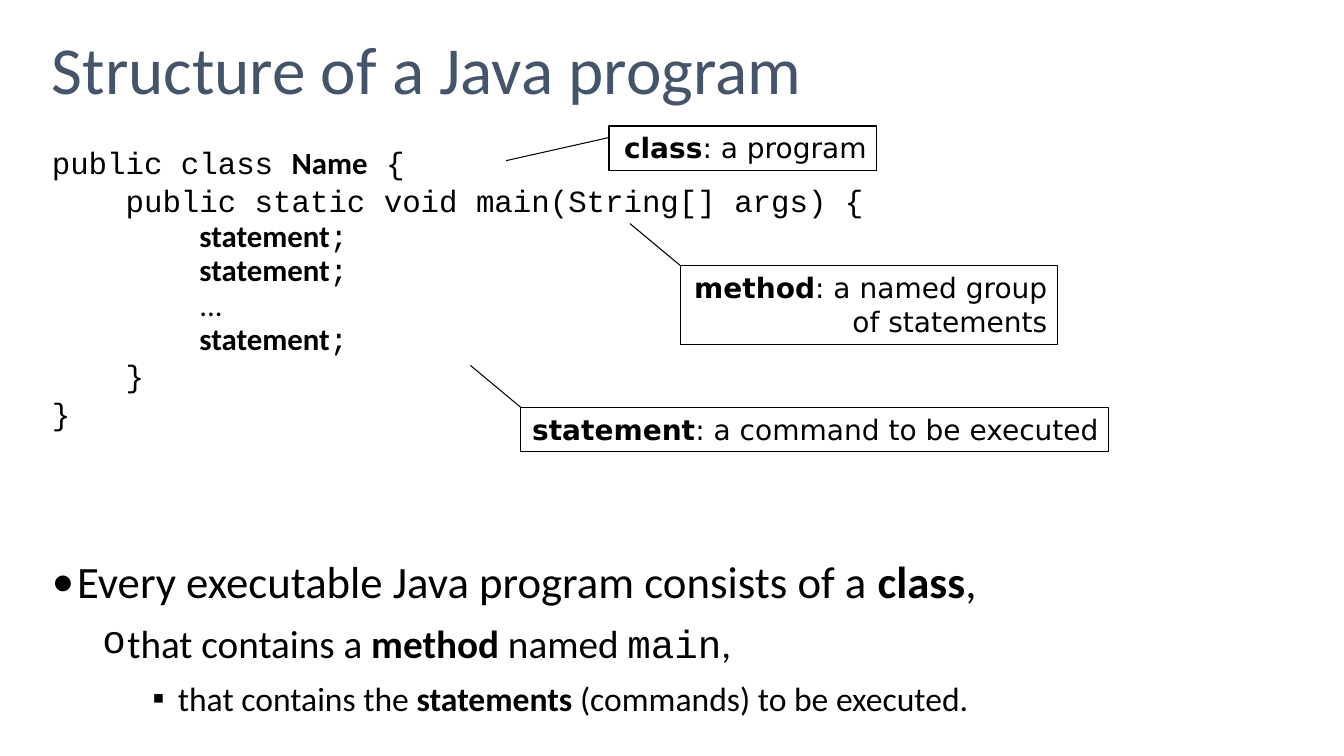
import pptx
import pptx.util
import pptx.dml.color
import pptx.enum.shapes
import pptx.enum.text
import pptx.oxml.ns
import lxml.etree
from dataclasses import dataclass

PX = 9525  # EMU in one px, 96 px to the inch


@dataclass(frozen=True)
class Theme:
    title: str = "44546A"
    ink: str = "000000"
    paper: str = "FFFFFF"
    body: str = "Calibri"
    mono: str = "Courier New"
    label: str = "DejaVu Sans"
    head: int = 48
    code: int = 22
    note: int = 20
    levels: tuple = (32, 28, 24)
    rule: float = 0.75


THEME = Theme()

# Each run is its text and a style: "" plain, "b" bold, "m" monospaced
STATE = [("        ", "m"), ("statement", "b"), (";", "m")]
CODE = [
    (0.8, [("public class ", "m"), ("Name", "b"), (" {", "m")]),
    (0.8, [("    public static void main(String[] args) {", "m")]),
    (0.7, STATE),
    (0.7, STATE),
    (0.7, [("        ", "m"), ("...", "")]),
    (0.7, STATE),
    (0.8, [("    }", "m")]),
    (0.8, [("}", "m")]),
]
POINTS = [
    ("•", THEME.body, [("Every executable Java program consists of a ", ""),
                       ("class", "b"), (",", "")]),
    ("o", THEME.mono, [("that contains a ", ""), ("method", "b"),
                       (" named ", ""), ("main", "m"), (",", "")]),
    ("▪", THEME.body, [("that contains the ", ""), ("statements", "b"),
                       (" (commands) to be executed.", "")]),
]
# Box, start of the leader down its left edge, tip from the box corner,
# hanging indent, term, lines of meaning
NOTES = [
    ((580, 120, 255, 42), 11, (-98, 33), 30, "class", [": a program"]),
    ((496, 388, 560, 42), 0, (-48, -40), 30, "statement",
     [": a command to be executed"]),
    ((648, 253, 359, 75), 0, (-48, -40), 138, "method",
     [": a named group", "of statements"]),
]


def color(code):
    return pptx.dml.color.RGBColor.from_string(code)


def scale(box):
    return [n * PX for n in box]


def frame(slide, box):
    text = slide.shapes.add_textbox(*scale(box)).text_frame
    text.word_wrap = True
    return text


def para(text, first):
    return text.paragraphs[0] if first else text.add_paragraph()


def indent(par, left, hang):
    props = par._p.get_or_add_pPr()
    props.set("marL", str(left * PX))
    props.set("indent", str(-hang * PX))
    return props


def bullet(props, mark, face):
    font = lxml.etree.SubElement(props, pptx.oxml.ns.qn("a:buFont"))
    font.set("typeface", face)
    char = lxml.etree.SubElement(props, pptx.oxml.ns.qn("a:buChar"))
    char.set("char", mark)


def style(par, size, face, ink=THEME.ink):
    par.font.size = pptx.util.Pt(size)
    par.font.name = face
    par.font.color.rgb = color(ink)


def fill(par, runs, base):
    """Add the runs, naming a font only where it differs from the base."""
    for words, kind in runs:
        run = par.add_run()
        run.text = words
        face = THEME.mono if kind == "m" else THEME.body
        if face != base:
            run.font.name = face
        if kind == "b":
            run.font.bold = True


def title(slide, box, words):
    text = frame(slide, box)
    text.vertical_anchor = pptx.enum.text.MSO_ANCHOR.MIDDLE
    par = text.paragraphs[0]
    par.text = words
    par.line_spacing = 0.9
    style(par, THEME.head, THEME.body, THEME.title)


def code(slide, box):
    text = frame(slide, box)
    for i, (space, runs) in enumerate(CODE):
        par = para(text, i == 0)
        indent(par, 24, 24)
        par.line_spacing = space
        par.space_before = pptx.util.Pt(6 if i else 0)
        style(par, THEME.code, THEME.mono)
        fill(par, runs, THEME.mono)


def points(slide, box):
    text = frame(slide, box)
    for i, (mark, face, runs) in enumerate(POINTS):
        par = para(text, i == 0)
        par.level = i
        props = indent(par, 24 + 48 * i, 24)
        par.line_spacing = 1.1
        par.space_before = pptx.util.Pt(5 if i else 0)
        bullet(props, mark, face)
        style(par, THEME.levels[i], THEME.body)
        fill(par, runs, THEME.body)


def note(slide, box, start, tip, hang, term, lines):
    group = slide.shapes.add_group_shape().shapes
    # Framed label
    shape = group.add_shape(pptx.enum.shapes.MSO_SHAPE.RECTANGLE, *scale(box))
    shape.shadow.inherit = False
    shape.fill.solid()
    shape.fill.fore_color.rgb = color(THEME.paper)
    shape.line.color.rgb = color(THEME.ink)
    shape.line.width = pptx.util.Pt(THEME.rule)
    text = shape.text_frame
    text.word_wrap = False
    text.auto_size = pptx.enum.text.MSO_AUTO_SIZE.SHAPE_TO_FIT_TEXT
    text.vertical_anchor = pptx.enum.text.MSO_ANCHOR.TOP
    par = text.paragraphs[0]
    par.alignment = pptx.enum.text.PP_ALIGN.RIGHT
    indent(par, hang, hang)
    style(par, THEME.note, THEME.label)
    run = par.add_run()
    run.text = term
    run.font.bold = True
    for i, words in enumerate(lines):
        if i:
            par.add_line_break()
        par.add_run().text = words
    # Leader to the code
    x, y = box[:2]
    ends = scale((x, y + start, x + tip[0], y + tip[1]))
    line = group.add_connector(pptx.enum.shapes.MSO_CONNECTOR.STRAIGHT, *ends)
    line.line.color.rgb = color(THEME.ink)
    line.line.width = pptx.util.Pt(THEME.rule)
    lxml.etree.SubElement(line._element.spPr, pptx.oxml.ns.qn("a:effectLst"))


def main():
    deck = pptx.Presentation()
    deck.slide_width, deck.slide_height = scale((1280, 720))
    slide = deck.slides.add_slide(deck.slide_layouts[6])
    title(slide, (40, 0, 1200, 139), "Structure of a Java program")
    code(slide, (40, 139, 1200, 290))
    points(slide, (40, 518, 1200, 165))
    for item in NOTES:
        note(slide, *item)
    deck.save("out.pptx")


if __name__ == "__main__":
    main()
